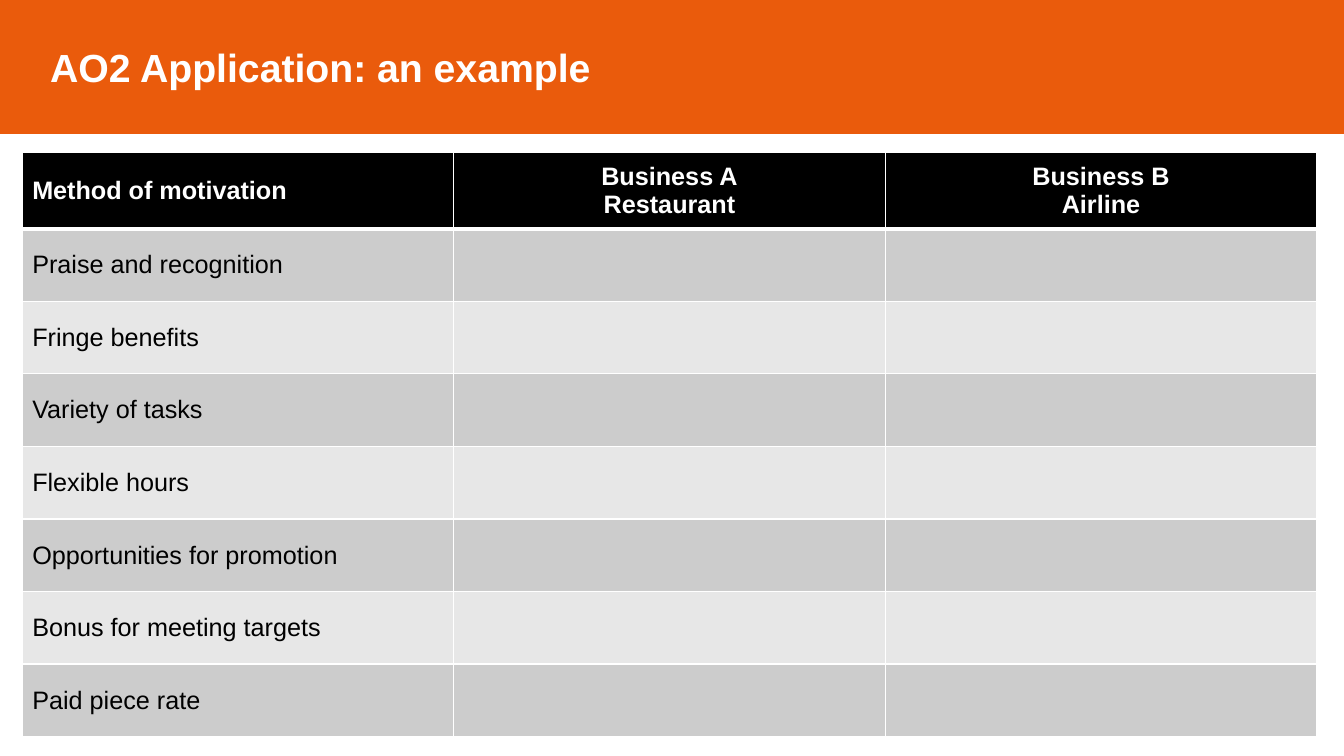
import pptx
import pptx.util
import pptx.dml.color
import pptx.enum.shapes
import pptx.enum.text
import pptx.oxml
import pptx.oxml.ns

Inches = pptx.util.Inches
Pt = pptx.util.Pt
ALIGN = pptx.enum.text.PP_ALIGN

TITLE = "AO2 Application: an example"
HEADS = ["Method of motivation", "Business A\nRestaurant", "Business B\nAirline"]
METHODS = [
    "Praise and recognition",
    "Fringe benefits",
    "Variety of tasks",
    "Flexible hours",
    "Opportunities for promotion",
    "Bonus for meeting targets",
    "Paid piece rate",
]
ORANGE, WHITE, BLACK = "EA5B0C", "FFFFFF", "000000"
BANDS = ["CCCCCC", "E7E7E7"]
WIDE, HIGH = 13.33, 7.5
COL, HEAD, ROW = 4.28, 0.76, 0.72


def paint(part, color):
    part.solid()
    part.fore_color.rgb = pptx.dml.color.RGBColor.from_string(color)


def write(frame, text, size=18, color=BLACK, bold=False, align=ALIGN.LEFT, indent=0):
    for i, line in enumerate(text.split("\n")):
        para = frame.add_paragraph() if i else frame.paragraphs[0]
        para.alignment = align
        if indent:
            para._p.get_or_add_pPr().set("marL", str(Inches(indent)))
        run = para.add_run()
        run.text = line
        run.font.name = "Arial"
        run.font.size = Pt(size)
        run.font.bold = bold
        paint(run.font.fill, color)


def edge(cell, **widths):
    props = cell._tc.get_or_add_tcPr()
    for side, width in widths.items():
        props.append(pptx.oxml.parse_xml(
            f'<a:ln{side} {pptx.oxml.ns.nsdecls("a")} w="{Pt(width)}">'
            f'<a:solidFill><a:srgbClr val="{WHITE}"/></a:solidFill></a:ln{side}>'))


def banner(slide):
    box = slide.shapes.add_shape(
        pptx.enum.shapes.MSO_SHAPE.RECTANGLE, 0, 0, Inches(WIDE), Inches(1.32))
    box.shadow.inherit = False
    paint(box.fill, ORANGE)
    paint(box.line.fill, ORANGE)
    box.line.width = Pt(1)
    box.text_frame.word_wrap = True
    box.text_frame.vertical_anchor = pptx.enum.text.MSO_ANCHOR.MIDDLE
    write(box.text_frame, TITLE, size=28, color=WHITE, bold=True, indent=0.4)


def grid(slide):
    rows = [HEADS] + [[name, "", ""] for name in METHODS]
    table = slide.shapes.add_table(
        len(rows), len(HEADS), Inches(0.22), Inches(1.51),
        Inches(COL * len(HEADS)), Inches(HEAD + ROW * len(METHODS))).table
    for col in table.columns:
        col.width = Inches(COL)
    for r, texts in enumerate(rows):
        table.rows[r].height = Inches(ROW if r else HEAD)
        for c, text in enumerate(texts):
            cell = table.cell(r, c)
            edge(cell, L=1, R=1, T=3 if r == 1 else 1, B=1 if r else 3)
            cell.fill.solid()
            paint(cell.fill, BANDS[(r - 1) % 2] if r else BLACK)
            cell.vertical_anchor = pptx.enum.text.MSO_ANCHOR.MIDDLE
            if text:
                write(cell.text_frame, text, color=BLACK if r else WHITE, bold=not r,
                      align=ALIGN.CENTER if c else ALIGN.LEFT)


def main():
    deck = pptx.Presentation()
    deck.slide_width, deck.slide_height = Inches(WIDE), Inches(HIGH)
    slide = deck.slides.add_slide(deck.slide_layouts[6])
    banner(slide)
    grid(slide)
    deck.save("out.pptx")


if __name__ == "__main__":
    main()
